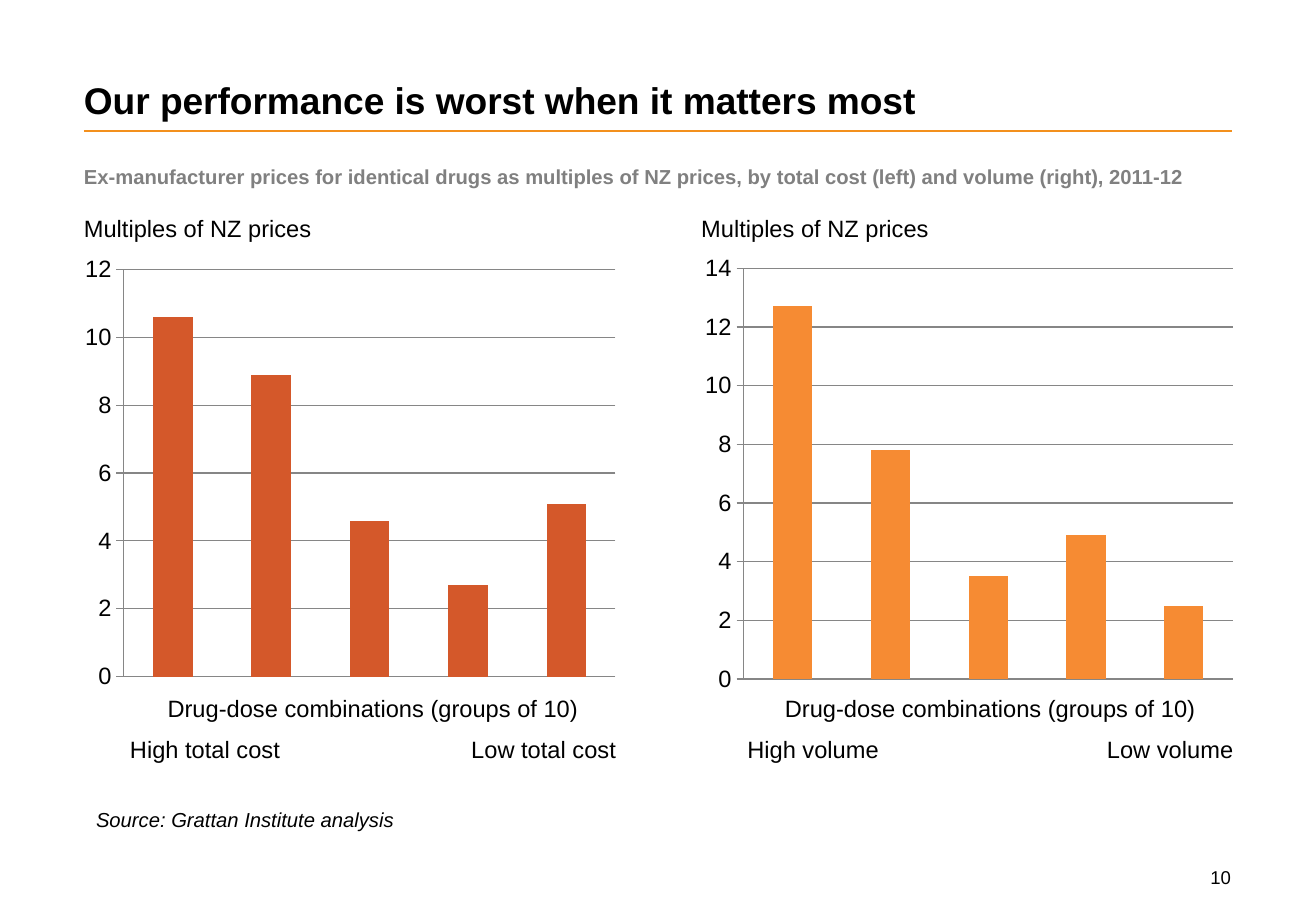
"""Build a slide comparing drug prices with NZ prices by total cost and by volume."""
from dataclasses import dataclass

from lxml import etree
from pptx import Presentation
from pptx.chart.data import CategoryChartData
from pptx.dml.color import RGBColor
from pptx.enum.chart import XL_CHART_TYPE, XL_TICK_LABEL_POSITION, XL_TICK_MARK
from pptx.enum.shapes import MSO_CONNECTOR
from pptx.enum.text import MSO_ANCHOR, PP_ALIGN
from pptx.oxml import parse_xml
from pptx.oxml.ns import qn
from pptx.slide import Slide
from pptx.text.text import TextFrame
from pptx.util import Inches, Pt

COLORS = {
    "text": "000000",
    "subtitle": "808080",
    "rule": "F3901D",
    "grid": "868686",
    "cost": "D4582A",
    "volume": "F68B33",
}
FONT = "Arial"
LEFT, RIGHT = 0.69, 10.14
CHART_WIDTH, CHART_HEIGHT = 4.38, 3.6
LABEL_INDENT = 0.38


@dataclass(frozen=True)
class Label:
    """A single line of text with its box and formatting."""

    text: str
    left: float
    top: float
    width: float
    height: float = 0.24
    size: float = 14
    color: str = "text"
    bold: bool = False
    italic: bool = False
    align: PP_ALIGN = PP_ALIGN.LEFT
    anchor: MSO_ANCHOR = MSO_ANCHOR.TOP


@dataclass(frozen=True)
class Panel:
    """A column chart with the labels that surround it."""

    left: float
    chart_top: float
    values: tuple[float, ...]
    axis_maximum: int
    plot: tuple[float, float, float, float]
    color: str
    measure: str


PANELS = (
    Panel(LEFT, 2.08, (10.6, 8.9, 4.6, 2.7, 5.1), 12,
          (0.075, 0.039, 0.925, 0.933), "cost", "total cost"),
    Panel(5.77, 2.1, (12.7, 7.8, 3.5, 4.9, 2.5), 14,
          (0.08, 0.03, 0.92, 0.94), "volume", "volume"),
)


def rgb(name: str) -> RGBColor:
    """Return the named colour."""
    return RGBColor.from_string(COLORS[name])


def write(frame: TextFrame, label: Label) -> None:
    """Write the label as one formatted run without insets."""
    frame.margin_left = frame.margin_right = 0
    frame.margin_top = frame.margin_bottom = 0
    paragraph = frame.paragraphs[0]
    paragraph.alignment = label.align
    run = paragraph.add_run()
    run.text = label.text
    run.font.name = FONT
    run.font.size = Pt(label.size)
    run.font.bold = label.bold
    run.font.italic = label.italic
    run.font.color.rgb = rgb(label.color)


def add_label(slide: Slide, label: Label) -> None:
    """Place a label in its own text box."""
    box = slide.shapes.add_textbox(Inches(label.left), Inches(label.top),
                                   Inches(label.width), Inches(label.height))
    box.text_frame.word_wrap = True
    box.text_frame.vertical_anchor = label.anchor
    write(box.text_frame, label)


def add_rule(slide: Slide) -> None:
    """Draw the rule below the title."""
    rule = slide.shapes.add_connector(MSO_CONNECTOR.STRAIGHT, Inches(LEFT), Inches(1.08),
                                      Inches(RIGHT), Inches(1.08))
    rule.line.color.rgb = rgb("rule")
    rule.line.width = Pt(1.5)
    etree.SubElement(rule._element.spPr, qn("a:effectLst"))


def add_subtitle(slide: Slide, label: Label) -> None:
    """Add the one-cell table that holds the subtitle."""
    table = slide.shapes.add_table(1, 1, Inches(label.left), Inches(label.top),
                                   Inches(label.width), Inches(label.height)).table
    table.first_row = table.horz_banding = False
    cell = table.cell(0, 0)
    cell.fill.background()
    cell.margin_left = cell.margin_right = cell.margin_top = cell.margin_bottom = 0
    write(cell.text_frame, label)
    cell.text_frame.paragraphs[0].space_after = Pt(6)


def add_chart(slide: Slide, panel: Panel) -> None:
    """Add the column chart of a panel."""
    data = CategoryChartData()
    data.categories = [str(group) for group in range(1, len(panel.values) + 1)]
    data.add_series("Series 1", panel.values)
    chart = slide.shapes.add_chart(
        XL_CHART_TYPE.COLUMN_CLUSTERED, Inches(panel.left), Inches(panel.chart_top),
        Inches(CHART_WIDTH), Inches(CHART_HEIGHT), data).chart
    chart.has_legend = chart.has_title = False
    chart.font.name = FONT
    chart.font.size = Pt(10)
    chart.font.color.rgb = rgb("text")
    columns = chart.plots[0]
    columns.vary_by_categories = False
    columns.gap_width = 150
    fill = columns.series[0].format.fill
    fill.solid()
    fill.fore_color.rgb = rgb(panel.color)
    chart.category_axis.visible = False
    multiples = chart.value_axis
    multiples.minimum_scale = 0
    multiples.maximum_scale = panel.axis_maximum
    multiples.major_unit = 2
    multiples.major_tick_mark = XL_TICK_MARK.CROSS
    multiples.minor_tick_mark = XL_TICK_MARK.NONE
    multiples.tick_label_position = XL_TICK_LABEL_POSITION.NEXT_TO_AXIS
    multiples.tick_labels.font.size = Pt(14)
    multiples.tick_labels.font.name = FONT
    multiples.tick_labels.font.color.rgb = rgb("text")
    multiples.has_major_gridlines = True
    for line in (multiples.format.line, multiples.major_gridlines.format.line):
        line.color.rgb = rgb("grid")
        line.width = Pt(0.75)
    set_plot_layout(chart._chartSpace.find(".//" + qn("c:plotArea")), panel.plot)


def set_plot_layout(plot_area: etree._Element, plot: tuple[float, float, float, float]) -> None:
    """Fix the inner plot area as fractions of the chart."""
    for layout in plot_area.findall(qn("c:layout")):
        plot_area.remove(layout)
    modes = '<c:layoutTarget val="inner"/><c:xMode val="edge"/><c:yMode val="edge"/>'
    sizes = "".join(f'<c:{key} val="{value}"/>' for key, value in zip("xywh", plot))
    plot_area.insert(0, parse_xml(
        '<c:layout xmlns:c="http://schemas.openxmlformats.org/drawingml/2006/chart">'
        f"<c:manualLayout>{modes}{sizes}</c:manualLayout></c:layout>"))


def add_panel(slide: Slide, panel: Panel) -> None:
    """Add a chart and its labels."""
    add_chart(slide, panel)
    left, width = panel.left + LABEL_INDENT, CHART_WIDTH - LABEL_INDENT
    half = width / 2
    for label in (
        Label("Multiples of NZ prices", panel.left, 1.76, CHART_WIDTH),
        Label("Drug-dose combinations (groups of 10)", left, 5.71, width,
              align=PP_ALIGN.CENTER),
        Label(f"High {panel.measure}", left, 6.05, half),
        Label(f"Low {panel.measure}", left + half, 6.05, half, align=PP_ALIGN.RIGHT),
    ):
        add_label(slide, label)


def main() -> None:
    """Build and save the slide."""
    deck = Presentation()
    deck.slide_width, deck.slide_height = Inches(10.83), Inches(7.5)
    slide = deck.slides.add_slide(deck.slide_layouts[6])
    add_rule(slide)
    add_label(slide, Label("Our performance is worst when it matters most", LEFT, 0.63, 9.45,
                           0.37, 22, bold=True, anchor=MSO_ANCHOR.BOTTOM))
    add_subtitle(slide, Label(
        "Ex-manufacturer prices for identical drugs as multiples of NZ prices, "
        "by total cost (left) and volume (right), 2011-12",
        LEFT, 1.37, 9.44, 0.48, 12, "subtitle", bold=True))
    for panel in PANELS:
        add_panel(slide, panel)
    add_label(slide, Label("Source: Grattan Institute analysis", 0.79, 6.65, 9.05, 0.2, 12,
                           italic=True))
    add_label(slide, Label("10", 9.38, 7.13, 0.75, 0.19, 11, align=PP_ALIGN.RIGHT))
    deck.save("out.pptx")


if __name__ == "__main__":
    main()
